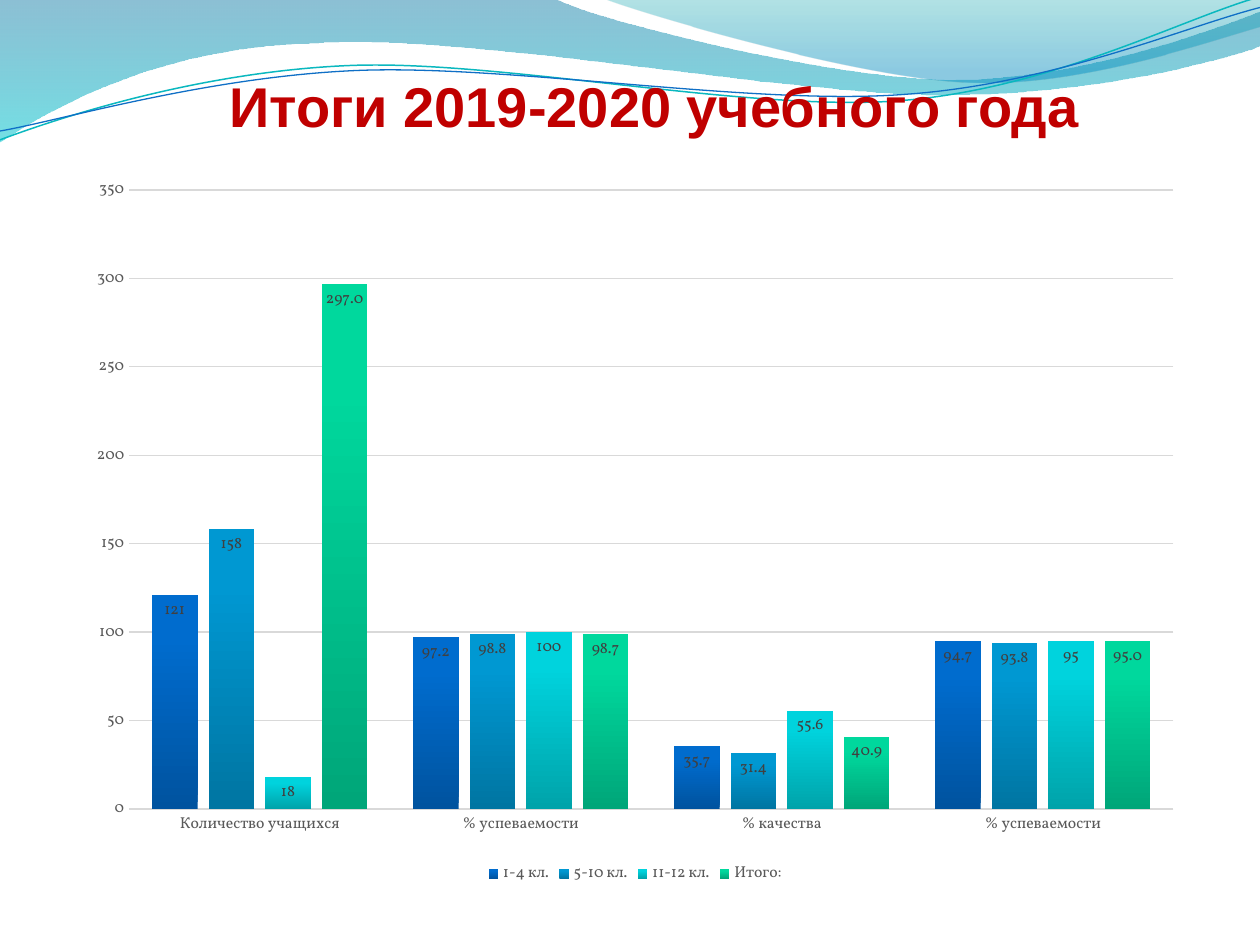
from math import cos, radians, sin

from lxml import etree
from pptx import Presentation
from pptx.chart.data import CategoryChartData
from pptx.dml.color import RGBColor
from pptx.enum.chart import (XL_CHART_TYPE as ChartType, XL_LABEL_POSITION as LabelPos,
                             XL_LEGEND_POSITION as LegendPos, XL_TICK_MARK as Tick)
from pptx.enum.text import PP_ALIGN as Align
from pptx.oxml import parse_xml
from pptx.oxml.ns import nsdecls, qn
from pptx.util import Inches, Pt

COLORS = {"title": "C00000", "axis_text": "595959", "label": "404040", "grid": "D9D9D9",
          "teal_line": "0AB8BF", "blue_line": "0F6FC6"}
CHART_FONT = "Vollkorn"
TILT = -2.7  # degrees clockwise, for the wave lines

# Each wave: start point, then runs of points; 1 point is a line, 3 are a Bézier curve.
# Gradient stops: position %, colour, opacity %.
WAVE_BANDS = [
    ((0, 0),
     [[(4.4, -0.01)],
      [(4.76, 0.17), (6.64, 0.63), (7.58, 0.63)],
      [(8.53, 0.63), (9.58, 0.26), (10, 0.09)],
      [(10.01, 0.36)],
      [(9.83, 0.44), (8.7, 0.76), (7.46, 0.75)],
      [(6.22, 0.75), (3.82, 0.28), (2.57, 0.34)],
      [(1.29, 0.36), (0.46, 0.83), (-0.01, 1.13)]],
     [(0, "0074A1", 45), (100, "00C6CF", 55)]),
    ((4.79, -0.01),
     [[(5.09, 0.11), (6.82, 0.62), (7.69, 0.65)],
      [(8.56, 0.69), (9.61, 0.32), (10, 0.21)],
      [(10, 0)]],
     [(0, "00A1A9", 30), (80, "008BBF", 45)]),
]
# Each line: start point, runs, centre of its tilt, colour, width
WAVE_LINES = [
    ((0, 1.11),
     [[(0.48, 0.93), (1.58, 0.57), (2.77, 0.52)],
      [(3.95, 0.47), (5.93, 0.89), (7.13, 0.8)],
      [(8.33, 0.71), (9.38, 0.15), (9.98, -0.02)]],
     (4.99, 0.58), "teal_line", 0.85),
    ((0, 1.04),
     [[(0.47, 0.96), (1.64, 0.61), (2.83, 0.56)],
      [(4.03, 0.51), (5.97, 0.84), (7.17, 0.75)],
      [(8.36, 0.67), (9.41, 0.21), (10, 0.06)]],
     (5, 0.59), "blue_line", 0.75),
]

CATEGORIES = ["Количество учащихся", "% успеваемости", "% качества", "% успеваемости"]
# Series: name, values, label format, gradient colours from bottom to top
SERIES = [
    ("1-4 кл.", (121, 97.2, 35.7, 94.7), "General", ("00539F", "006CCE", "006DCF")),
    ("5-10 кл.", (158, 98.8, 31.4, 93.8), "General", ("0075A2", "0098D2", "0099D3")),
    ("11-12 кл.", (18, 100, 55.6, 95), "General", ("00A3AA", "00D3DD", "00D4DE")),
    ("Итого:", (297, 98.7, 40.9, 95), "0.0", ("00A679", "00D89D", "00D99E")),
]


def rgb(name):
    return RGBColor.from_string(COLORS[name])


def set_font(font, name, size, color, bold=False):
    font.name, font.size, font.bold = name, Pt(size), bold
    font.color.rgb = rgb(color)


def set_gradient(item, stops, angle):
    """Fill a shape or a chart series with a linear gradient, angle in degrees clockwise."""
    fill = item.fill if hasattr(item, "fill") else item.format.fill
    fill.background()
    empty_fill = next(item._element.iter(qn("a:noFill")))
    gradient = parse_xml(f'<a:gradFill {nsdecls("a")} rotWithShape="1"><a:gsLst/>'
                         f'<a:lin ang="{angle * 60000}" scaled="0"/></a:gradFill>')
    for position, color, opacity in stops:
        stop = etree.SubElement(gradient[0], qn("a:gs"), pos=str(position * 1000))
        tint = etree.SubElement(stop, qn("a:srgbClr"), val=color)
        if opacity < 100:
            etree.SubElement(tint, qn("a:alpha"), val=str(opacity * 1000))
    empty_fill.getparent().replace(empty_fill, gradient)


def turn(point, center, degrees):
    """Turn a point clockwise about a centre."""
    dx, dy = point[0] - center[0], point[1] - center[1]
    c, s = cos(radians(degrees)), sin(radians(degrees))
    return center[0] + c * dx - s * dy, center[1] + s * dx + c * dy


def add_wave(page, left, top, start, runs, close):
    """Draw the points as a freeform, then bend each run of three into one curve."""
    points = [(Inches(left + x), Inches(top + y)) for x, y in [start, *sum(runs, [])]]
    builder = page.shapes.build_freeform(*points[0])
    builder.add_line_segments(points[1:], close=close)
    wave = builder.convert_to_shape()
    wave.shadow.inherit = False
    segments = iter(list(wave._element.iter(qn("a:lnTo"))))
    for run in runs:
        first, *others = [next(segments) for _ in run]
        if others:
            first.tag = qn("a:cubicBezTo")
            for segment in others:
                first.append(segment[0])
                segment.getparent().remove(segment)
    return wave


def add_waves(page, left, top):
    for start, runs, stops in WAVE_BANDS:
        band = add_wave(page, left, top, start, runs, close=True)
        set_gradient(band, stops, 90)
        band.line.fill.background()
    for start, runs, center, color, width in WAVE_LINES:
        level_runs = [[turn(point, center, -TILT) for point in run] for run in runs]
        curve = add_wave(page, left, top, turn(start, center, -TILT), level_runs, close=False)
        curve.rotation = TILT
        curve.fill.background()
        curve.line.color.rgb = rgb(color)
        curve.line.width = Pt(width)


def add_title(page, left, top, width, height):
    box = page.shapes.add_textbox(Inches(left), Inches(top), Inches(width), Inches(height))
    box.text_frame.word_wrap = True
    para = box.text_frame.paragraphs[0]
    para.text = "Итоги 2019-2020 учебного года"
    para.alignment = Align.CENTER
    set_font(para.font, "Arial", 32, "title", bold=True)


def style_axes(chart):
    for axis in (chart.category_axis, chart.value_axis):
        axis.major_tick_mark = axis.minor_tick_mark = Tick.NONE
        set_font(axis.tick_labels.font, CHART_FONT, 9, "axis_text")
    chart.category_axis.format.line.color.rgb = rgb("grid")
    chart.category_axis.format.line.width = Pt(1)
    values = chart.value_axis
    values.format.line.fill.background()
    values.major_gridlines.format.line.color.rgb = rgb("grid")
    values.major_gridlines.format.line.width = Pt(0.75)


def add_results_chart(page, left, top, width, height):
    data = CategoryChartData()
    data.categories = CATEGORIES
    for name, values, _, _ in SERIES:
        data.add_series(name, values)
    chart = page.shapes.add_chart(ChartType.COLUMN_CLUSTERED, Inches(left), Inches(top),
                                  Inches(width), Inches(height), data).chart
    chart.font.name, chart.font.size = CHART_FONT, Pt(10)
    chart.has_title = False
    chart.has_legend = True
    chart.legend.position = LegendPos.BOTTOM
    chart.legend.include_in_layout = False
    set_font(chart.legend.font, CHART_FONT, 9, "axis_text")
    style_axes(chart)

    plot = chart.plots[0]
    plot.gap_width, plot.overlap, plot.vary_by_categories = 100, -24, False
    for series, (_, _, number_format, shades) in zip(plot.series, SERIES):
        set_gradient(series, [(at, shade, 100) for at, shade in zip((0, 80, 100), shades)], 270)
        labels = series.data_labels
        labels.show_value = True
        labels.position = LabelPos.INSIDE_END
        labels.number_format, labels.number_format_is_linked = number_format, False
        set_font(labels.font, CHART_FONT, 9, "label")


def main():
    deck = Presentation()
    deck.slide_width, deck.slide_height = Inches(10), Inches(7.5)
    page = deck.slides.add_slide(deck.slide_layouts[6])
    add_waves(page, 0, 0)
    add_title(page, 1.61, 0.52, 7.17, 0.64)
    add_results_chart(page, 0.59, 1.31, 8.9, 5.75)
    deck.save("out.pptx")


if __name__ == "__main__":
    main()
